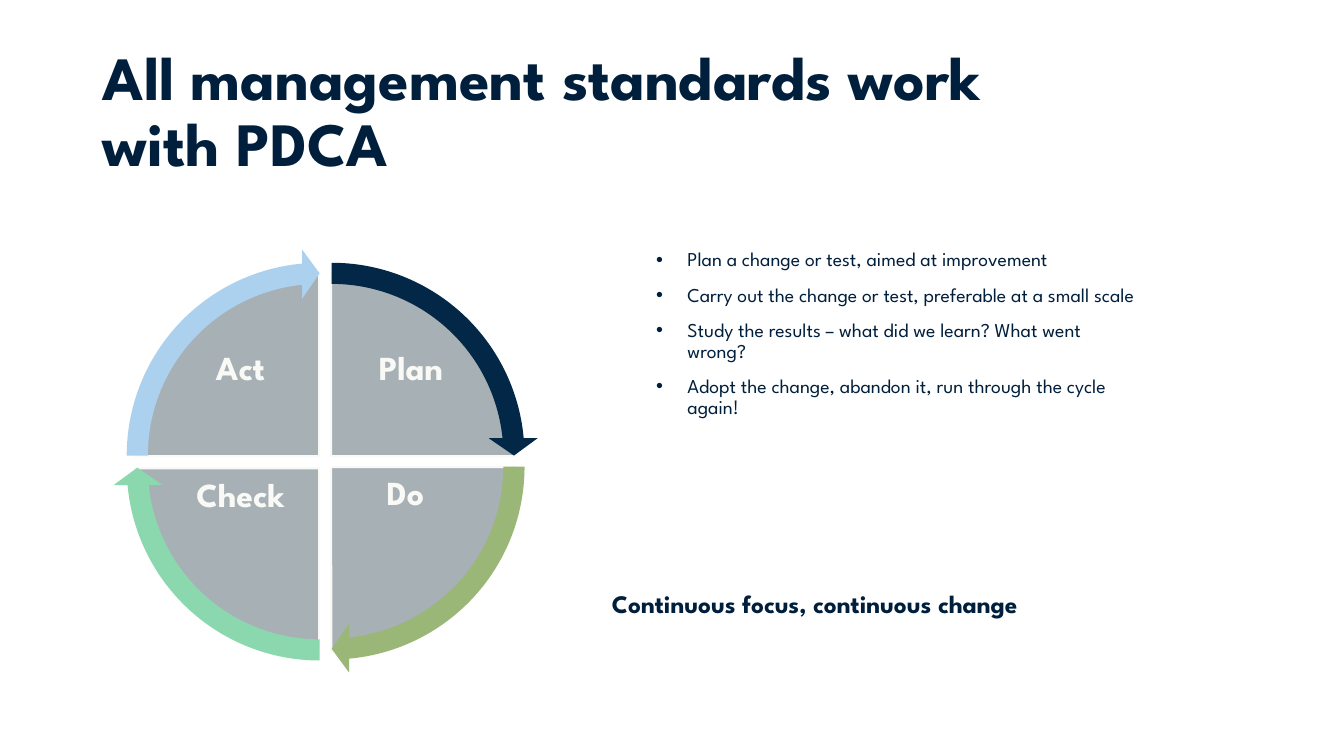
from lxml import etree
from pptx import Presentation, util as u
from pptx.dml.color import RGBColor
from pptx.enum import shapes, text
from pptx.oxml.ns import qn

PX = 9144
FONT = "League Spartan"
COLORS = {
    "ink": "001F3C", "pale": "F9F9F5", "quarter": "A7B0B5",
    "plan": "022747", "do": "9BB778", "check": "8CD8AE", "act": "ABD1EF",
}
QUARTER = 54
CIRCLE = 4 * QUARTER
ARROW_HEAD = 3.275


def px(*lengths):
    return [u.Emu(length * PX) for length in lengths]


def color(name):
    return RGBColor.from_string(COLORS[name])


def add_bullet(para, indent):
    props = para._p.get_or_add_pPr()
    props.set("marL", str(indent * PX))
    props.set("indent", str(-indent * PX))
    etree.SubElement(props, qn("a:buFont")).set("typeface", "Arial")
    etree.SubElement(props, qn("a:buChar")).set("char", "•")


def add_text(parent, box, lines, size, ink="ink", bold=False, bullet=0, frame=None, layout=None):
    text_frame = parent.add_textbox(*px(*box)).text_frame
    for key, value in {"word_wrap": True, **(frame or {})}.items():
        setattr(text_frame, key, value)
    for index, line in enumerate(lines):
        para = text_frame.paragraphs[0] if index == 0 else text_frame.add_paragraph()
        if bullet:
            add_bullet(para, bullet)
        for key, value in (layout or {}).items():
            if index or key != "space_before":
                setattr(para, key, value)
        span = para.add_run()
        span.text = line
        for key, value in {"name": FONT, "size": u.Pt(size), "bold": bold}.items():
            setattr(span.font, key, value)
        span.font.color.rgb = color(ink)


def add_arc(parent, kind, box, fill, adjustments):
    arc = parent.add_shape(kind, *px(*box))
    arc.shadow.inherit = False
    for index, value in enumerate(adjustments):
        arc.adjustments[index] = value
    arc.fill.solid()
    arc.fill.fore_color.rgb = color(fill)
    arc.line.fill.background()
    return arc


def add_cycle(page, left, top):
    group = page.shapes.add_group_shape().shapes
    steps = [
        ("Plan", "plan", 34, 23, 228, 99),
        ("Do ", "do", 34, 34, 227, 223),
        ("Check", "check", 22, 35, 59, 225),
        ("Act", "act", 22, 23, 59, 99),
    ]
    margins = {f"margin_{side}": px(3)[0] for side in ("left", "top", "right", "bottom")}
    layout = {"alignment": text.PP_ALIGN.CENTER, "line_spacing": 0.9}
    starts = [(3 + index) * QUARTER % CIRCLE for index in range(len(steps))]
    for start, (label, fill, x, y, label_x, label_y) in zip(starts, steps):
        pie = add_arc(group, shapes.MSO_SHAPE.PIE, (left + x, top + y, 365, 365),
                      "quarter", [start, (start + QUARTER) % CIRCLE])
        pie.line.color.rgb = color("pale")
        pie.line.width = u.Pt(1.5)
        add_text(group, (left + label_x, top + label_y, 135, 100), [label], 24,
                 "pale", True, frame=margins, layout=layout)
    for start, (label, fill, x, y, label_x, label_y) in zip(starts, steps):
        add_arc(group, shapes.MSO_SHAPE.CIRCULAR_ARROW,
                (left + x - 22, top + y - 23, 410, 410), fill,
                [0.051, ARROW_HEAD, start + QUARTER - ARROW_HEAD, start, 0.059])


def add_title(page, box):
    add_text(page.shapes, box, ["All management standards work with PDCA"], 44, bold=True,
             frame={"vertical_anchor": text.MSO_ANCHOR.MIDDLE}, layout={"line_spacing": 0.9})


def add_steps(page, box):
    lines = [
        "Plan a change or test, aimed at improvement",
        "Carry out the change or test, preferable at a small scale",
        "Study the results – what did we learn? What went wrong?",
        "Adopt the change, abandon it, run through the cycle again!",
    ]
    add_text(page.shapes, box, lines, 14, bullet=31,
             layout={"line_spacing": 0.9, "space_before": u.Pt(10)})


def add_motto(page, box):
    add_text(page.shapes, box, ["Continuous focus, continuous change"], 18, bold=True,
             frame={"auto_size": text.MSO_AUTO_SIZE.SHAPE_TO_FIT_TEXT})


def main():
    deck = Presentation()
    deck.slide_width, deck.slide_height = px(1333, 750)
    page = deck.slides.add_slide(deck.slide_layouts[6])
    add_title(page, (92, 40, 994, 145))
    add_steps(page, (641, 243, 502, 398))
    add_cycle(page, 112, 247)
    add_motto(page, (597, 579, 546, 40))
    deck.save("out.pptx")


if __name__ == "__main__":
    main()
